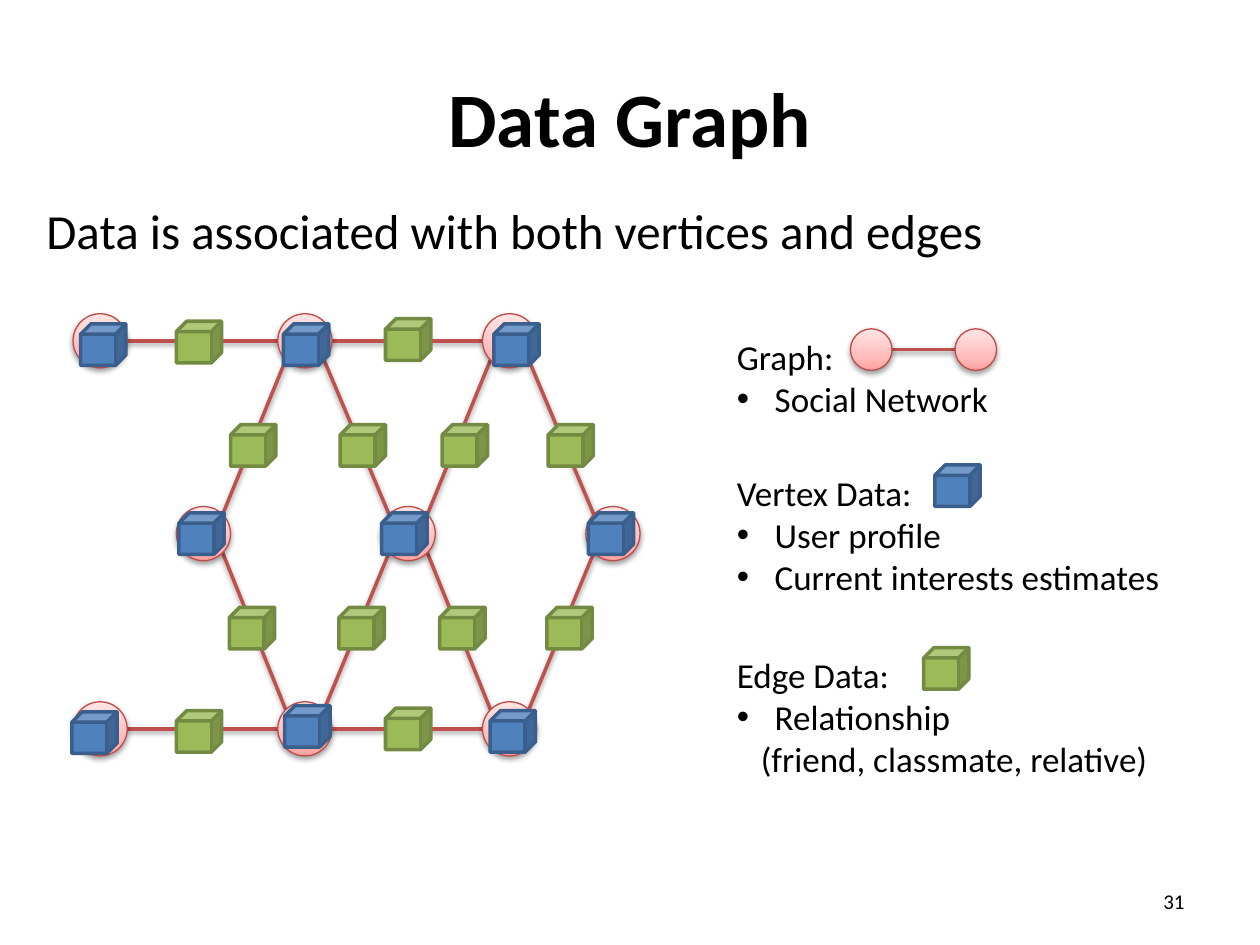
import copy
import math

import lxml.etree
import pptx
import pptx.dml.color
import pptx.enum.dml
import pptx.enum.shapes
import pptx.enum.text
import pptx.oxml
import pptx.oxml.ns
import pptx.util

Inches = pptx.util.Inches
Shapes = pptx.enum.shapes.MSO_SHAPE
Align = pptx.enum.text.PP_ALIGN

THEME = {
    "font": "Calibri", "text": "000000",
    "title": 44, "lead": 28, "legend": 20, "number": 12,
    "edge": "C0504D", "vertex_line": "BE4B48",
    "vertex_fill": [(0, "FFE5E5"), (0.65, "FFBEBD"), (1, "FFA2A1")],
    "vertex_data": ("4F81BD", "3A5F8C"), "edge_data": ("9BBB59", "738A42"),
}

# Content: (text, left, top, width, height, size, bold, alignment, middle anchor)
HEADINGS = [
    ("Data Graph", 0.5, 0.3, 9, 1.25, "title", True, Align.CENTER, True),
    ("Data is associated with both vertices and edges",
     0.27, 1.54, 9.48, 0.57, "lead", False, Align.LEFT, False),
    ("31", 7.17, 6.95, 2.33, 0.4, "number", False, Align.RIGHT, True),
]
# Legend: (top, width, height, lines); each line is (text, kind)
LEGEND_LEFT = 5.75
LEGEND = [
    (2.61, 3.92, 0.77, [("Graph:", "head"), ("Social Network", "bullet")]),
    (3.69, 4, 1.11, [("Vertex Data:", "head"), ("User profile", "bullet"),
                     ("Current interests estimates", "bullet")]),
    (5.14, 3.92, 1.11, [("Edge Data:", "head"), ("Relationship", "bullet"),
                        ("(friend, classmate, relative)", "continued")]),
]
INDENTS = {"head": 0, "bullet": 0.3, "continued": 0.19}
LEGEND_CUBES = [("vertex_data", 7.42, 3.69), ("edge_data", 7.33, 5.14)]

# Graph rows: (first left, top), with the data cube positions of each row
VERTEX_SIZE, VERTEX_PITCH = 0.43, 1.625
ROWS = {
    "top": (0.58, 2.49, [(0.64, 2.57), (2.25, 2.57), (3.92, 2.57)]),
    "middle": (1.4, 4.02, [(1.42, 4.07), (3.03, 4.07), (4.67, 4.07)]),
    "bottom": (0.58, 5.57, [(0.57, 5.65), (2.26, 5.6), (3.89, 5.64)]),
}
# Edges: (start vertex, end vertex, data cube position)
EDGES = [
    (("top", 0), ("top", 1), (1.4, 2.55)),
    (("top", 1), ("top", 2), (3.06, 2.53)),
    (("middle", 0), ("top", 1), (1.83, 3.37)),
    (("middle", 1), ("top", 1), (2.7, 3.37)),
    (("middle", 1), ("top", 2), (3.51, 3.37)),
    (("middle", 2), ("top", 2), (4.35, 3.37)),
    (("bottom", 1), ("middle", 0), (1.82, 4.82)),
    (("bottom", 1), ("middle", 1), (2.69, 4.82)),
    (("bottom", 2), ("middle", 1), (3.49, 4.82)),
    (("bottom", 2), ("middle", 2), (4.34, 4.82)),
    (("bottom", 0), ("bottom", 1), (1.4, 5.64)),
    (("bottom", 1), ("bottom", 2), (3.06, 5.62)),
]
LEGEND_VERTICES = [(6.75, 2.61), (7.58, 2.61)]
LEGEND_VERTEX_SIZE = 0.33

SHADOW = (
    '<a:effectLst %s><a:outerShdw blurRad="40000" dist="20000" dir="5400000" rotWithShape="0">'
    '<a:srgbClr val="000000"><a:alpha val="38000"/></a:srgbClr></a:outerShdw></a:effectLst>'
    % pptx.oxml.ns.nsdecls("a")
)


def rgb(value):
    return pptx.dml.color.RGBColor.from_string(value)


def set_line(shape, color, width):
    shape.line.color.rgb = rgb(color)
    shape.line.width = pptx.util.Pt(width)


def add_shadow(shape):
    shape._element.spPr.append(pptx.oxml.parse_xml(SHADOW))


def add_edge(slide, start, end, size):
    """Join two circles of one size, given by their left and top."""
    step_x, step_y = (0 if a == b else math.copysign(1, b - a) for a, b in zip(start, end))
    reach = size / 2 / math.hypot(step_x, step_y)
    offset = (step_x * reach, step_y * reach)
    begin = [p + size / 2 + d for p, d in zip(start, offset)]
    finish = [p + size / 2 - d for p, d in zip(end, offset)]
    edge = slide.shapes.add_connector(
        pptx.enum.shapes.MSO_CONNECTOR.STRAIGHT, *map(Inches, begin + finish))
    set_line(edge, THEME["edge"], 2)
    add_shadow(edge)


def add_vertex(slide, position, size):
    vertex = slide.shapes.add_shape(Shapes.OVAL, *map(Inches, (*position, size, size)))
    vertex.fill.gradient()
    vertex.fill.gradient_angle = 270
    stop_list = vertex._element.spPr.find(".//" + pptx.oxml.ns.qn("a:gsLst"))
    stop_list.append(copy.deepcopy(stop_list[-1]))
    for stop, (place, color) in zip(vertex.fill.gradient_stops, THEME["vertex_fill"]):
        stop.position = place
        stop.color.rgb = rgb(color)
    set_line(vertex, THEME["vertex_line"], 0.75)
    add_shadow(vertex)


def add_cube(slide, kind, left, top):
    cube = slide.shapes.add_shape(Shapes.CUBE, *map(Inches, (left, top, 0.36, 0.33)))
    fill, line = THEME[kind]
    cube.shadow.inherit = False
    cube.fill.solid()
    cube.fill.fore_color.rgb = rgb(fill)
    set_line(cube, line, 2)


def add_text_frame(slide, *box):
    frame = slide.shapes.add_textbox(*map(Inches, box)).text_frame
    frame.word_wrap = True
    return frame


def add_run(paragraph, text, size, bold=False):
    run = paragraph.add_run()
    run.text = text
    run.font.name = THEME["font"]
    run.font.size = pptx.util.Pt(THEME[size])
    run.font.bold = bold
    run.font.color.rgb = rgb(THEME["text"])


def add_legend(slide, top, width, height, lines):
    frame = add_text_frame(slide, LEGEND_LEFT, top, width, height)
    frame.auto_size = pptx.enum.text.MSO_AUTO_SIZE.SHAPE_TO_FIT_TEXT
    for index, (text, kind) in enumerate(lines):
        paragraph = frame.add_paragraph() if index else frame.paragraphs[0]
        add_run(paragraph, text, "legend")
        properties = paragraph._p.get_or_add_pPr()
        indent = Inches(INDENTS[kind])
        properties.set("marL", str(indent))
        if kind == "bullet":
            properties.set("indent", str(-indent))
            font = lxml.etree.SubElement(properties, pptx.oxml.ns.qn("a:buFont"))
            font.set("typeface", "Arial")
            bullet = lxml.etree.SubElement(properties, pptx.oxml.ns.qn("a:buChar"))
            bullet.set("char", "•")


def main():
    presentation = pptx.Presentation()
    presentation.slide_width, presentation.slide_height = Inches(10), Inches(7.5)
    slide = presentation.slides.add_slide(presentation.slide_layouts[6])

    # Title, lead sentence and slide number
    for text, left, top, width, height, size, bold, alignment, middle in HEADINGS:
        frame = add_text_frame(slide, left, top, width, height)
        if middle:
            frame.vertical_anchor = pptx.enum.text.MSO_ANCHOR.MIDDLE
        frame.paragraphs[0].alignment = alignment
        add_run(frame.paragraphs[0], text, size, bold)

    # Graph: edges, vertices, then the data on both
    vertices = {(row, column): (left + column * VERTEX_PITCH, top)
                for row, (left, top, cubes) in ROWS.items() for column in range(len(cubes))}
    for start, end, _ in EDGES:
        add_edge(slide, vertices[start], vertices[end], VERTEX_SIZE)
    for position in vertices.values():
        add_vertex(slide, position, VERTEX_SIZE)
    for _, _, cubes in ROWS.values():
        for position in cubes:
            add_cube(slide, "vertex_data", *position)
    for _, _, position in EDGES:
        add_cube(slide, "edge_data", *position)

    # Legend
    for entry in LEGEND:
        add_legend(slide, *entry)
    for cube in LEGEND_CUBES:
        add_cube(slide, *cube)
    add_edge(slide, *LEGEND_VERTICES, LEGEND_VERTEX_SIZE)
    for position in LEGEND_VERTICES:
        add_vertex(slide, position, LEGEND_VERTEX_SIZE)

    presentation.save("out.pptx")


if __name__ == "__main__":
    main()
